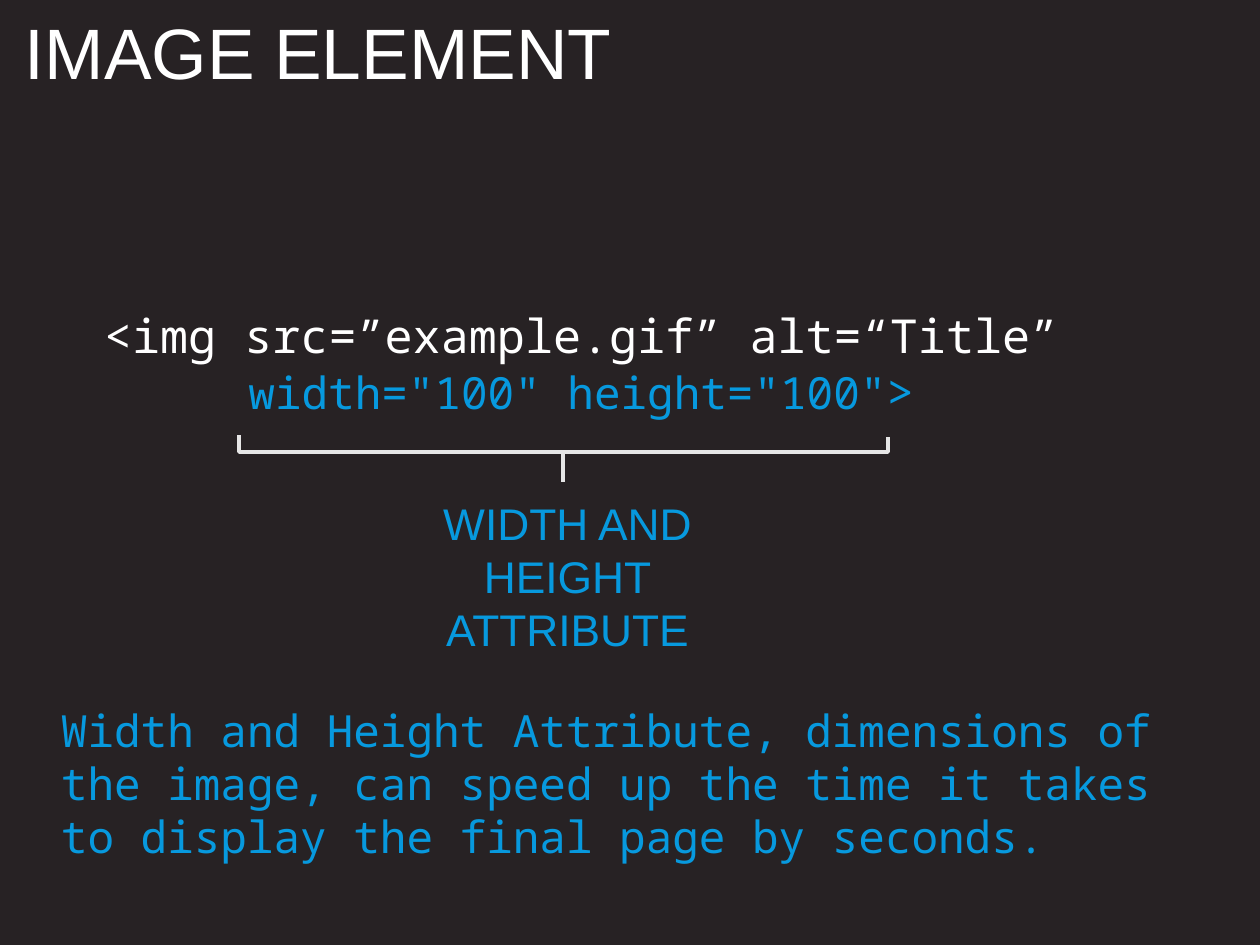
from pptx import Presentation
from pptx import util as u
from pptx.dml.color import RGBColor
from pptx.enum import shapes, text
from pptx.oxml.ns import qn
from lxml import etree

PX = 10320  # EMU per px
DARK = RGBColor(0x27, 0x22, 0x24)
WHITE = RGBColor(0xFF, 0xFF, 0xFF)
BLUE = RGBColor(0x07, 0x99, 0xDE)
GREY = RGBColor(0xE6, 0xE6, 0xE6)
MONO, SANS = "Noto Sans Mono", "Arial"
MID, TOP = text.MSO_ANCHOR.MIDDLE, text.MSO_ANCHOR.TOP
MID_AL, LEFT = text.PP_ALIGN.CENTER, text.PP_ALIGN.LEFT

deck = Presentation()
deck.slide_width, deck.slide_height = 1260 * PX, 945 * PX
slide = deck.slides.add_slide(deck.slide_layouts[6])
slide.background.fill.solid()
slide.background.fill.fore_color.rgb = DARK


def put(area, lines, font, wrap=True, anchor=TOP, align=LEFT, space=1.0):
    """Add a text box; each line is a list of (words, size, colour)."""
    box = slide.shapes.add_textbox(*(n * PX for n in area))
    frame = box.text_frame
    form = {"word_wrap": wrap, "vertical_anchor": anchor, "margin_left": 0,
            "margin_top": 0, "margin_right": 0, "margin_bottom": 0}
    if not wrap:
        form["auto_size"] = text.MSO_AUTO_SIZE.SHAPE_TO_FIT_TEXT
    for key, val in form.items():
        setattr(frame, key, val)
    for i, line in enumerate(lines):
        para = frame.add_paragraph() if i else frame.paragraphs[0]
        para.alignment, para.line_spacing = align, space
        for words, size, tint in line:
            run = para.add_run()
            run.text = words
            run.font.name, run.font.size = font, u.Pt(size)
            run.font.color.rgb = tint


# Code sample
put((100, 305, 963, 116),
    [[("<img src=”example.gif” alt=“Title”", 38, WHITE)],
     [('width="100" height="100"', 36, BLUE), (">", 38, BLUE)]],
    MONO, wrap=False, anchor=MID, align=MID_AL)

# Label under the bracket
put((442, 495, 251, 161),
    [[(words, 36, BLUE)] for words in ("WIDTH AND", "HEIGHT", "ATTRIBUTE")],
    SANS, wrap=False, anchor=MID, align=MID_AL)

# Bracket and its stem
pen = slide.shapes.build_freeform(239, 435, scale=PX)
pen.add_line_segments([(239, 452), (888, 452), (888, 437)], close=False)
brace = pen.convert_to_shape()
brace.shadow.inherit = False
brace.fill.background()
stem = slide.shapes.add_connector(
    shapes.MSO_CONNECTOR.STRAIGHT, 563 * PX, 453 * PX, 563 * PX, 482 * PX)
etree.SubElement(stem.element.spPr, qn("a:effectLst"))
for part in (brace, stem):
    part.line.color.rgb = GREY
    part.line.width = u.Pt(3)

# Title and note
put((25, 25, 801, 175), [[("IMAGE ELEMENT", 58, WHITE)]], SANS, space=0.8)
put((61, 703, 1137, 230),
    [[("Width and Height Attribute, dimensions of the image, can speed up "
       "the time it takes to display the final page by seconds.", 36, BLUE)]],
    MONO)

deck.save("out.pptx")
